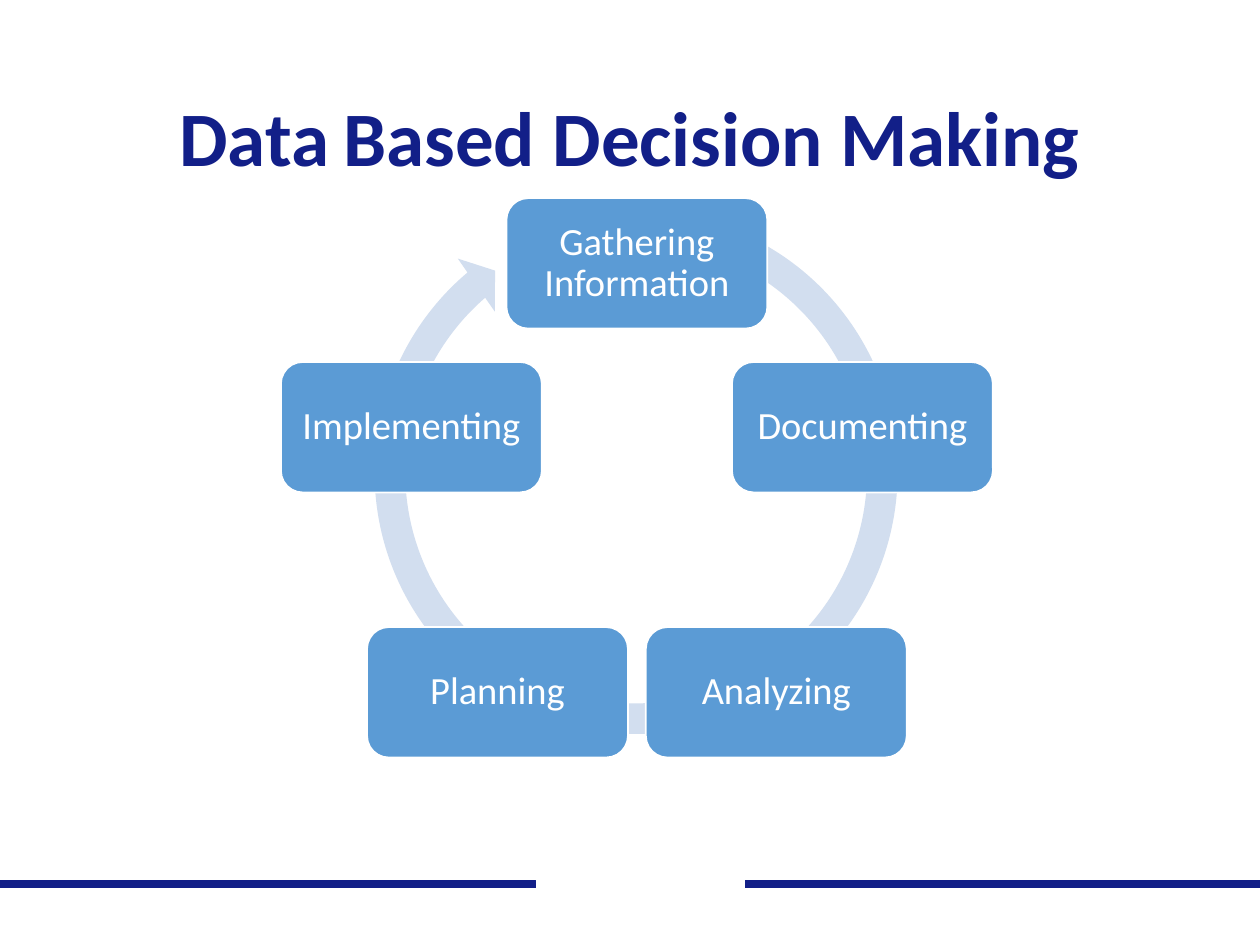
import math
from dataclasses import dataclass

from lxml import etree
from pptx import Presentation
from pptx.dml.color import RGBColor
from pptx.enum.shapes import MSO_CONNECTOR, MSO_SHAPE
from pptx.enum.text import MSO_ANCHOR, PP_ALIGN
from pptx.oxml.ns import qn
from pptx.util import Cm, Pt

ROUNDED, CIRCULAR_ARROW = MSO_SHAPE.ROUNDED_RECTANGLE, MSO_SHAPE.CIRCULAR_ARROW
STRAIGHT = MSO_CONNECTOR.STRAIGHT
MIDDLE, CENTER = MSO_ANCHOR.MIDDLE, PP_ALIGN.CENTER

FONT = "Calibri"
COLORS = {
    "navy": "121F88",
    "gap": "002060",
    "box": "5B9BD5",
    "ring": "D2DEEF",
    "white": "FFFFFF",
}

# Cycle geometry in cm
CENTER_X, CENTER_Y, RADIUS = 12.84, 10.09, 4.78
BOX_W, BOX_H = 5.26, 2.63
FOOTER_Y = 17.83


@dataclass
class Run:
    text: str
    size: float
    color: str
    bold: bool = False


@dataclass
class Rule:
    start: float
    end: float
    color: str


TITLE = [
    Run("Data", 44, "navy", True),
    Run(" ", 36, "gap"),
    Run("Based Decision Making", 44, "navy", True),
]
STEPS = ["Gathering Information", "Documenting", "Analyzing", "Planning", "Implementing"]
FOOTER = [Rule(0, 25.4, "navy"), Rule(10.8, 15.01, "white")]


def rgb(name: str) -> RGBColor:
    return RGBColor.from_string(COLORS[name])


def write(sp, runs: list[Run], *, inset_x: float = 0.25, inset_y: float = 0.13) -> None:
    """Fill a shape with one centred paragraph."""
    tf = sp.text_frame
    tf.word_wrap = True
    tf.vertical_anchor = MIDDLE
    tf.margin_left = tf.margin_right = Cm(inset_x)
    tf.margin_top = tf.margin_bottom = Cm(inset_y)
    p = tf.paragraphs[0]
    p.alignment = CENTER
    p.line_spacing = 0.9
    for run in runs:
        r = p.add_run()
        r.text = run.text
        r.font.name = FONT
        r.font.size = Pt(run.size)
        r.font.bold = run.bold
        r.font.color.rgb = rgb(run.color)


def add_rule(s, rule: Rule) -> None:
    line = s.shapes.add_connector(
        STRAIGHT, Cm(rule.start), Cm(FOOTER_Y), Cm(rule.end), Cm(FOOTER_Y))
    line.line.color.rgb = rgb(rule.color)
    line.line.width = Pt(4.5)
    etree.SubElement(line._element.spPr, qn("a:effectLst"))


def add_ring(s) -> None:
    ring = s.shapes.add_shape(CIRCULAR_ARROW, Cm(7.21), Cm(3.91), Cm(11.23), Cm(11.23))
    ring.shadow.inherit = False
    ring.fill.solid()
    ring.fill.fore_color.rgb = rgb("ring")
    ring.line.fill.background()
    # Band width, head angle, end angle, start angle, head width
    for i, value in enumerate([5.5 / 100, 3.31, 137.72, 173.88, 5.8 / 100]):
        ring.adjustments[i] = value


def add_step(s, index: int, label: str) -> None:
    """Place a step box clockwise on the ring, starting at the top."""
    angle = math.tau * index / len(STEPS)
    x = CENTER_X + RADIUS * math.sin(angle) - BOX_W / 2
    y = CENTER_Y - RADIUS * math.cos(angle) - BOX_H / 2
    box = s.shapes.add_shape(ROUNDED, Cm(x), Cm(y), Cm(BOX_W), Cm(BOX_H))
    box.shadow.inherit = False
    box.fill.solid()
    box.fill.fore_color.rgb = rgb("box")
    box.line.color.rgb = rgb("white")
    box.line.width = Pt(1)
    write(box, [Run(label, 22, "white")], inset_x=0.23, inset_y=0.23)


def main() -> None:
    prs = Presentation()
    prs.slide_width, prs.slide_height = Cm(25.4), Cm(19.05)
    s = prs.slides.add_slide(prs.slide_layouts[6])

    # Footer rule with a gap in the middle
    for rule in FOOTER:
        add_rule(s, rule)

    # Title
    title = s.shapes.add_textbox(Cm(1.75), Cm(1.02), Cm(21.9), Cm(3.68))
    write(title, TITLE)

    # Cycle
    add_ring(s)
    for index, label in enumerate(STEPS):
        add_step(s, index, label)

    prs.save("out.pptx")


if __name__ == "__main__":
    main()
